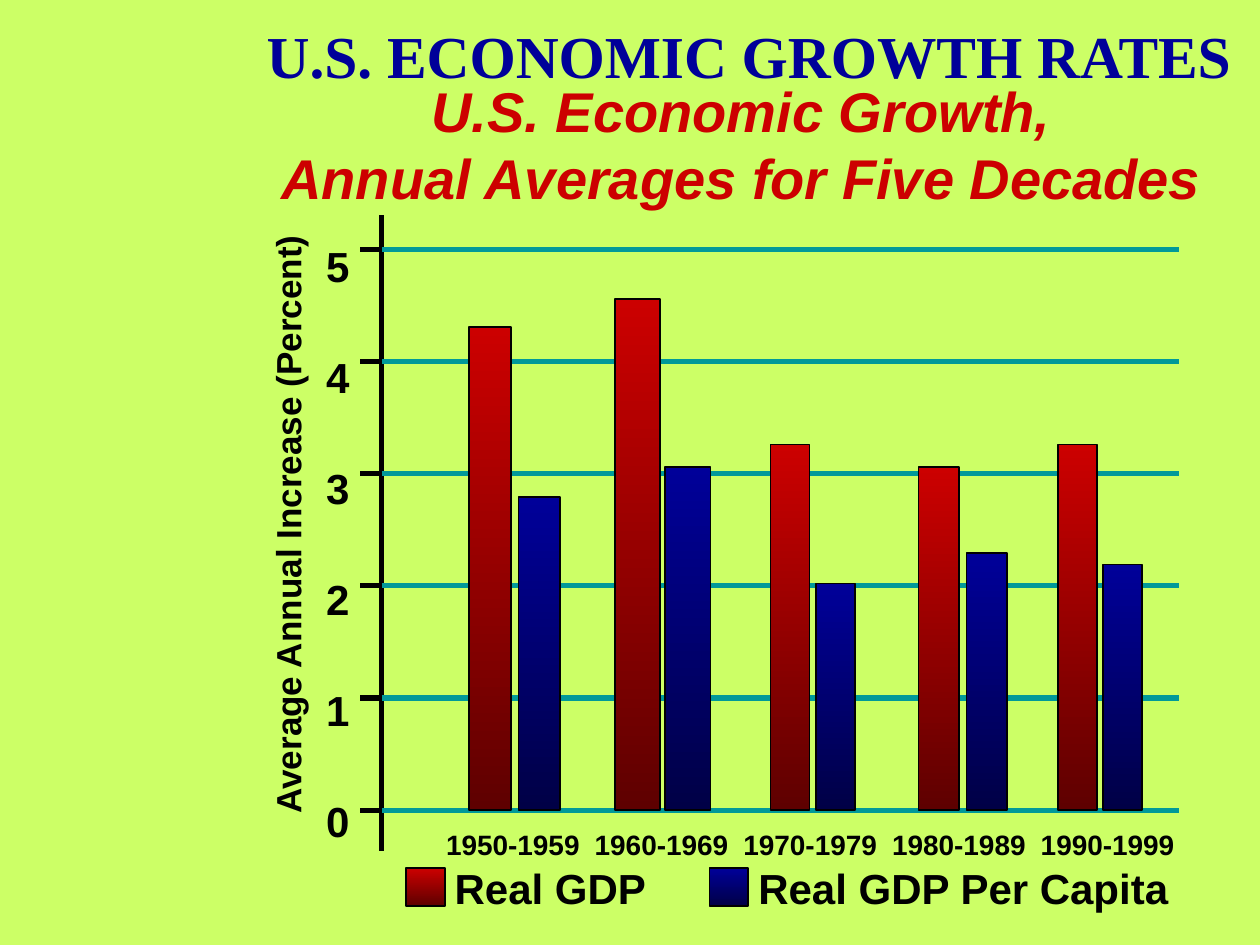
from lxml import etree
from pptx import Presentation
from pptx.dml.color import RGBColor
from pptx.enum.shapes import MSO_CONNECTOR as Connector, MSO_SHAPE as Shape
from pptx.enum.text import MSO_ANCHOR as Anchor, MSO_AUTO_SIZE as AutoSize, PP_ALIGN as Align
from pptx.oxml.ns import qn
from pptx.util import Inches, Pt

BLACK, TEAL, RED, NAVY = "000000", "009999", "CC0000", "000099"
RED_FADE, NAVY_FADE = (RED, "5E0000"), (NAVY, "000046")
BASELINE, UNIT, TOP_VALUE = 6.43, 0.89, 5
DECADES = [
    ("1950-1959", 4.31, 2.79, 3.89, 4.28, 0.33),
    ("1960-1969", 4.56, 3.06, 5.06, 5.46, 0.36),
    ("1970-1979", 3.26, 2.02, 6.27, 6.63, 0.31),
    ("1980-1989", 3.06, 2.29, 7.45, 7.83, 0.32),
    ("1990-1999", 3.26, 2.19, 8.55, 8.91, 0.31),
]


def color(value):
    return RGBColor.from_string(value)


def write(shape, lines, size, value=BLACK, font="Arial", align=Align.LEFT,
          italic=False, wrap=True, spacing=None):
    frame = shape.text_frame
    frame.word_wrap = wrap
    frame.auto_size = AutoSize.NONE
    frame.vertical_anchor = Anchor.TOP
    for index, line in enumerate(lines):
        paragraph = frame.add_paragraph() if index else frame.paragraphs[0]
        paragraph.alignment = align
        paragraph.line_spacing = spacing
        run = paragraph.add_run()
        run.text = line
        run.font.name = font
        run.font.size = Pt(size)
        run.font.bold = True
        run.font.italic = italic
        run.font.color.rgb = color(value)


def add_text(slide, box, lines, size, **style):
    shape = slide.shapes.add_textbox(*map(Inches, box))
    write(shape, lines, size, **style)
    return shape


def add_line(slide, start, end, value):
    line = slide.shapes.add_connector(Connector.STRAIGHT, *map(Inches, start + end))
    line.line.color.rgb = color(value)
    line.line.width = Pt(3)
    etree.SubElement(line._element.spPr, qn("a:effectLst"))


def add_block(slide, box, fade):
    shape = slide.shapes.add_shape(Shape.RECTANGLE, *map(Inches, box))
    shape.shadow.inherit = False
    shape.fill.gradient()
    shape.fill.gradient_angle = 270
    for stop, value in zip(shape.fill.gradient_stops, fade):
        stop.color.rgb = color(value)
    shape.line.color.rgb = color(BLACK)
    shape.line.width = Pt(1)


def add_headings(slide, title_box, subtitle_box):
    title = slide.shapes.title
    title.left, title.top, title.width, title.height = map(Inches, title_box)
    write(title, ["U.S. ECONOMIC GROWTH RATES"], 34, value=NAVY,
          font="Times New Roman", align=Align.CENTER)
    add_text(slide, subtitle_box,
             ["U.S. Economic Growth,", "Annual Averages for Five Decades"], 32,
             value=RED, align=Align.CENTER, italic=True)


def add_axes(slide, left, top, right, bottom):
    heights = [BASELINE - UNIT * step for step in range(TOP_VALUE + 1)]
    for y in heights:
        add_line(slide, (left - 0.17, y), (left + 0.17, y), BLACK)
    add_line(slide, (left, top), (left, bottom), BLACK)
    for y in heights:
        add_line(slide, (left, y), (right, y), TEAL)
    numbers = [str(value) for value in range(TOP_VALUE, -1, -1)]
    add_text(slide, (left - 0.54, 1.38, 0.39, 5.37), numbers, 24,
             wrap=False, spacing=Pt(63.4))
    label = add_text(slide, (-0.12, 3.94, 4.8, 0.43),
                     ["Average Annual Increase (Percent)"], 20, wrap=False)
    label.rotation = 270


def add_bars(slide, label_left, label_top, label_step):
    for index, (decade, total, capita, total_x, capita_x, width) in enumerate(DECADES):
        for value, center, fade in ((total, total_x, RED_FADE), (capita, capita_x, NAVY_FADE)):
            height = value * UNIT
            add_block(slide, (center - width / 2, BASELINE - height, width, height), fade)
        add_text(slide, (label_left + index * label_step, label_top, 1.3, 0.36),
                 [decade], 16, align=Align.CENTER)


def add_legend(slide, top):
    for name, left, width, fade in (
        ("Real GDP", 3.22, 1.72, RED_FADE),
        ("Real GDP Per Capita", 5.63, 3.46, NAVY_FADE),
    ):
        add_block(slide, (left, top + 0.09, 0.31, 0.3), fade)
        add_text(slide, (left + 0.29, top, width, 0.5), [name], 24, wrap=False)


def main():
    presentation = Presentation()
    presentation.slide_width, presentation.slide_height = Inches(10), Inches(7.5)
    slide = presentation.slides.add_slide(presentation.slide_layouts[5])
    slide.background.fill.solid()
    slide.background.fill.fore_color.rgb = color("CCFF66")
    add_headings(slide, (1.99, 0.1, 7.91, 0.66), (2.06, 0.56, 7.65, 1.16))
    add_axes(slide, 3.03, 1.71, 9.36, 6.75)
    add_bars(slide, 3.42, 6.52, 1.18)
    add_legend(slide, 6.8)
    presentation.save("out.pptx")


if __name__ == "__main__":
    main()
